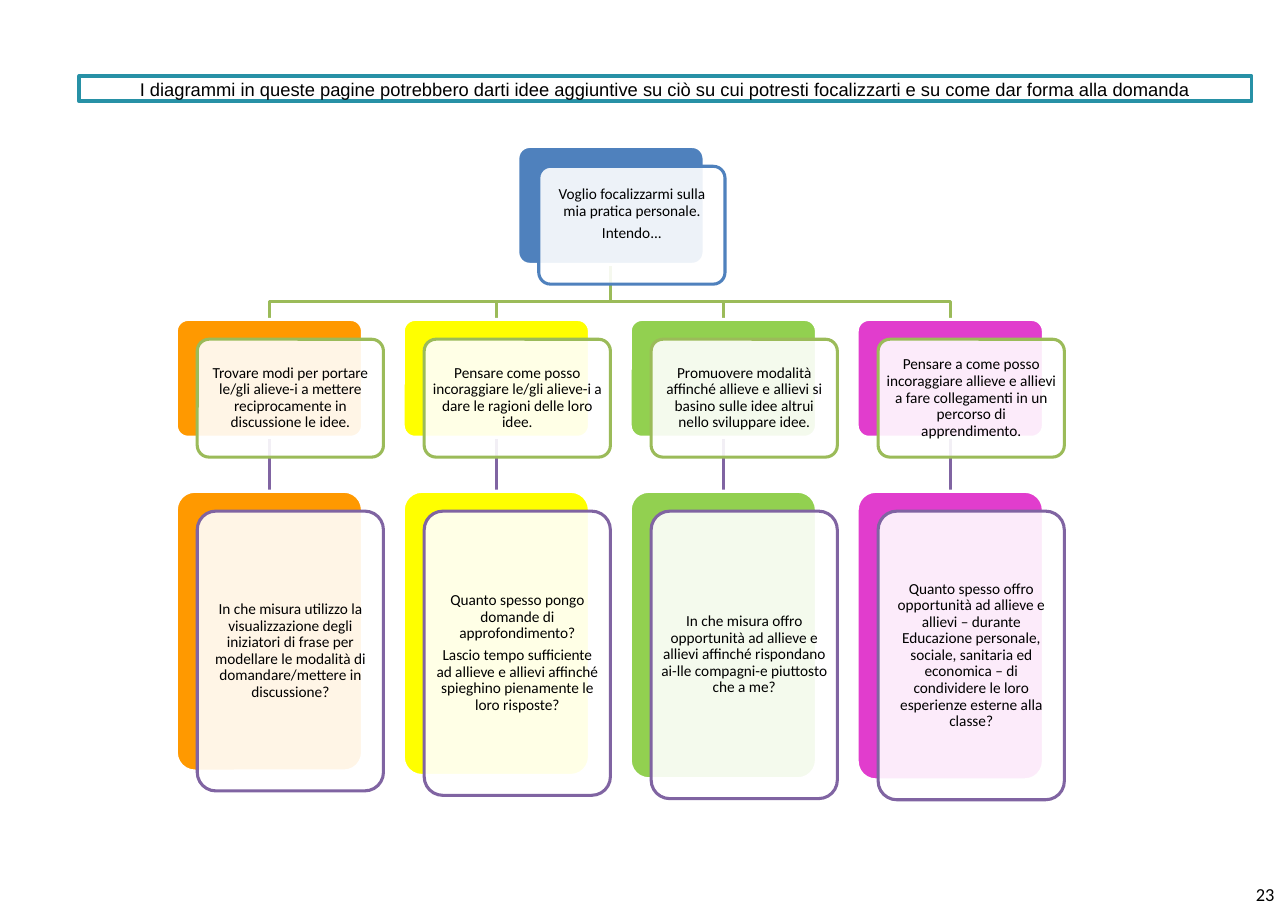
from lxml import etree
from pptx import Presentation
from pptx.dml.color import RGBColor
from pptx.enum.shapes import MSO_CONNECTOR, MSO_SHAPE
from pptx.enum.text import MSO_ANCHOR, PP_ALIGN
from pptx.oxml.ns import qn
from pptx.util import Inches, Pt

STRAIGHT = MSO_CONNECTOR.STRAIGHT
RECT, ROUNDED = MSO_SHAPE.RECTANGLE, MSO_SHAPE.ROUNDED_RECTANGLE
TOP, MIDDLE = MSO_ANCHOR.TOP, MSO_ANCHOR.MIDDLE
LEFT, CENTER = PP_ALIGN.LEFT, PP_ALIGN.CENTER

BLACK = RGBColor(0x00, 0x00, 0x00)
WHITE = RGBColor(0xFF, 0xFF, 0xFF)
TEAL = RGBColor(0x27, 0x91, 0xA6)
BLUE = RGBColor(0x4F, 0x81, 0xBD)
OLIVE = RGBColor(0x9B, 0xBB, 0x59)
PURPLE = RGBColor(0x80, 0x64, 0xA2)
ORANGE = RGBColor(0xFF, 0x99, 0x00)
YELLOW = RGBColor(0xFF, 0xFF, 0x00)
GREEN = RGBColor(0x92, 0xD0, 0x50)
MAGENTA = RGBColor(0xE1, 0x3D, 0xCD)

TITLE = ("I diagrammi in queste pagine potrebbero darti idee aggiuntive su ciò su cui "
         "potresti focalizzarti e su come dar forma alla domanda")
ROOT = ["Voglio focalizzarmi sulla mia pratica personale.", "Intendo..."]
# Colour, aim, questions, height of the question card
BRANCHES = [
    (ORANGE,
     "Trovare modi per portare le/gli alieve-i a mettere reciprocamente in "
     "discussione le idee.",
     ["In che misura utilizzo la visualizzazione degli iniziatori di frase per "
      "modellare le modalità di domandare/mettere in discussione?"], 2.54),
    (YELLOW,
     "Pensare come posso incoraggiare le/gli alieve-i a dare le ragioni delle loro idee.",
     ["Quanto spesso pongo domande di approfondimento?",
      "Lascio tempo sufficiente ad allieve e allievi affinché spieghino pienamente "
      "le loro risposte?"], 2.58),
    (GREEN,
     "Promuovere modalità affinché allieve e allievi si basino sulle idee altrui "
     "nello sviluppare idee.",
     ["In che misura offro opportunità ad allieve e allievi affinché rispondano "
      "ai-lle compagni-e piuttosto che a me?"], 2.61),
    (MAGENTA,
     "Pensare a come posso incoraggiare allieve e allievi a fare collegamenti in un "
     "percorso di apprendimento.",
     ["Quanto spesso offro opportunità ad allieve e allievi – durante Educazione "
      "personale, sociale, sanitaria ed economica – di condividere le loro "
      "esperienze esterne alla classe?"], 2.62),
]

CARD_W, CARD_H = 1.69, 1.07
PITCH = 2.06          # distance between branches
OFFSET = 0.18         # shift of the front card
ROOT_X, AIM_Y, QUESTION_Y = 3.1, 1.57, 3.13   # relative to the diagram


def write(tf, lines, size, font, align=CENTER, anchor=TOP, insets=(0, 0, 0, 0)):
    tf.word_wrap = True
    tf.vertical_anchor = anchor
    tf.margin_left, tf.margin_top, tf.margin_right, tf.margin_bottom = map(Inches, insets)
    for i, line in enumerate(lines):
        p = tf.paragraphs[0] if i == 0 else tf.add_paragraph()
        p.text = line
        p.alignment = align
        p.font.size = Pt(size)
        p.font.name = font
        p.font.color.rgb = BLACK
        yield p


def add_box(s, kind, x, y, w, h, line, width, fill=None):
    sp = s.shapes.add_shape(kind, Inches(x), Inches(y), Inches(w), Inches(h))
    sp.shadow.inherit = False
    sp.line.color.rgb = line
    sp.line.width = Pt(width)
    if fill is None:
        sp.fill.background()
    else:
        sp.fill.solid()
        sp.fill.fore_color.rgb = fill
    if kind == ROUNDED:
        sp.adjustments[0] = 0.1
    return sp


def add_title(s, x, y, w, h):
    sp = add_box(s, RECT, x, y, w, h, TEAL, 2.5)
    list(write(sp.text_frame, [TITLE], 12, "Arial", insets=(0, 0.02, 0, 0)))


def add_card(s, x, y, h, color, border, lines, bottom=0.04):
    add_box(s, ROUNDED, x, y, CARD_W, h, WHITE, 2, color)
    front = add_box(s, ROUNDED, x + OFFSET + 0.01, y + OFFSET, CARD_W, h, border, 2, WHITE)
    clr = front.fill._xPr.find(qn("a:solidFill"))[0]
    etree.SubElement(clr, qn("a:alpha")).set("val", "90000")
    paragraphs = write(front.text_frame, lines, 10, "Calibri", anchor=MIDDLE,
                       insets=(0.04, 0.04, 0.04, bottom))
    for i, p in enumerate(paragraphs):
        p.line_spacing = 0.9
        p.space_before = Pt(3.5 if i else 0)


def add_elbow(s, x1, y1, x2, y2):
    bend = y2 - 0.16
    points = [(Inches(px), Inches(py)) for px, py in ((x1, bend), (x2, bend), (x2, y2))]
    fb = s.shapes.build_freeform(Inches(x1), Inches(y1))
    fb.add_line_segments(points, close=False)
    sp = fb.convert_to_shape()
    sp.shadow.inherit = False
    sp.fill.background()
    sp.line.color.rgb = OLIVE
    sp.line.width = Pt(2)


def add_stem(s, x, y1, y2):
    cx = s.shapes.add_connector(STRAIGHT, Inches(x), Inches(y1), Inches(x), Inches(y2))
    cx.line.color.rgb = PURPLE
    cx.line.width = Pt(2)
    etree.SubElement(cx._element.spPr, qn("a:effectLst"))


def add_diagram(s, x, y):
    aim_y, question_y = y + AIM_Y, y + QUESTION_Y
    half = CARD_W / 2

    # Connecting lines, behind the cards
    for i in range(len(BRANCHES)):
        center = x + i * PITCH + half
        add_stem(s, center, aim_y + CARD_H, question_y)
        add_elbow(s, x + ROOT_X + half, y + CARD_H, center, aim_y)

    # Root card, its text set slightly above the middle
    add_card(s, x + ROOT_X, y, CARD_H, BLUE, BLUE, ROOT, bottom=0.24)

    # One aim and its questions per branch
    for i, (color, aim, questions, height) in enumerate(BRANCHES):
        left = x + i * PITCH
        add_card(s, left, aim_y, CARD_H, color, OLIVE, [aim])
        add_card(s, left, question_y, height, color, PURPLE, questions)


def add_page_number(s, x, y, w, h):
    sp = s.shapes.add_textbox(Inches(x), Inches(y), Inches(w), Inches(h))
    list(write(sp.text_frame, ["23"], 12, "Calibri", LEFT, insets=(0.1, 0.05, 0.1, 0.05)))
    sp.text_frame.word_wrap = False


def main():
    prs = Presentation()
    prs.slide_width, prs.slide_height = Inches(11.69), Inches(8.27)
    s = prs.slides.add_slide(prs.slide_layouts[6])
    add_title(s, 0.72, 0.69, 10.64, 0.23)
    add_diagram(s, 1.6, 1.33)
    add_page_number(s, 11.3, 7.97, 0.37, 0.3)
    prs.save("out.pptx")


if __name__ == "__main__":
    main()
